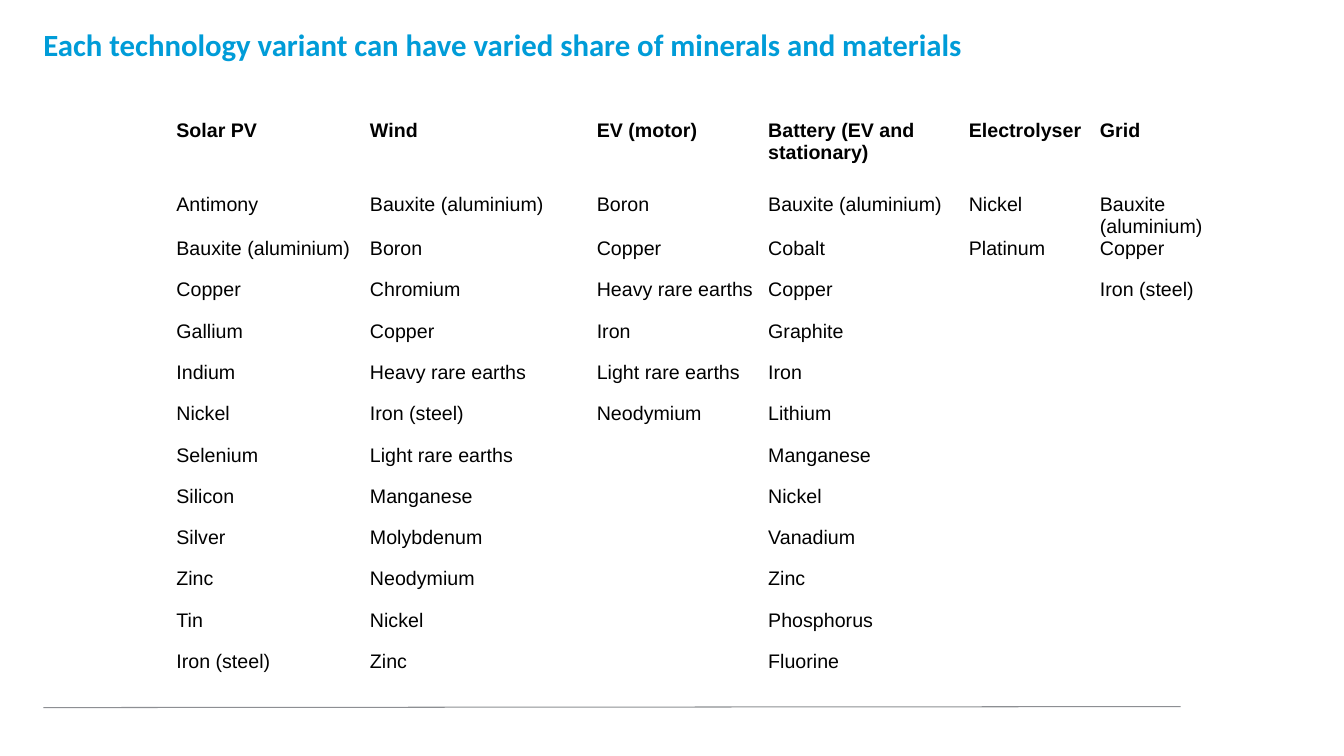
from itertools import zip_longest

from lxml import etree
from pptx import Presentation
from pptx.dml.color import RGBColor
from pptx.enum import shapes, text
from pptx.oxml import ns
from pptx.util import Inches, Pt

BLUE = RGBColor(0x00, 0x9C, 0xD8)
BLACK = RGBColor(0x00, 0x00, 0x00)
GREY = RGBColor(0x8D, 0x8F, 0x93)

HEAD = {"name": "Calibri", "size": Pt(22), "bold": True}
BODY = {"name": "Arial", "size": Pt(14), "bold": False}
INSET = {"margin_left": Inches(0.07), "margin_right": Inches(0.07),
         "margin_top": 0, "margin_bottom": 0,
         "vertical_anchor": text.MSO_ANCHOR.TOP}

WIDTHS = [1.09, 1.92, 2.25, 1.7, 1.99, 1.3, 1.86]
MINERALS = {
    "Solar PV": ["Antimony", "Bauxite (aluminium)", "Copper", "Gallium",
                 "Indium", "Nickel", "Selenium", "Silicon", "Silver", "Zinc",
                 "Tin", "Iron (steel)"],
    "Wind": ["Bauxite (aluminium)", "Boron", "Chromium", "Copper",
             "Heavy rare earths", "Iron (steel)", "Light rare earths",
             "Manganese", "Molybdenum", "Neodymium", "Nickel", "Zinc"],
    "EV (motor)": ["Boron", "Copper", "Heavy rare earths", "Iron",
                   "Light rare earths", "Neodymium"],
    "Battery (EV and stationary)": [
        "Bauxite (aluminium)", "Cobalt", "Copper", "Graphite", "Iron",
        "Lithium", "Manganese", "Nickel", "Vanadium", "Zinc", "Phosphorus",
        "Fluorine"],
    "Electrolyser": ["Nickel", "Platinum"],
    "Grid": ["Bauxite (aluminium)", "Copper", "Iron (steel)"],
}


def apply(target, values):
    for key, value in values.items():
        setattr(target, key, value)


def style(para, font, color):
    apply(para.font, font)
    para.font.color.rgb = color


def add_title(slide, words):
    title = slide.shapes.title
    apply(title, {"left": Inches(0.43), "top": Inches(0.21),
                  "width": Inches(12.34), "height": Inches(0.87)})
    frame = title.text_frame
    apply(frame, {"text": words, "word_wrap": True, "margin_left": 0,
                  "margin_right": 0, "margin_top": Inches(0.05),
                  "margin_bottom": Inches(0.05),
                  "vertical_anchor": text.MSO_ANCHOR.TOP})
    para = frame.paragraphs[0]
    para.alignment = text.PP_ALIGN.LEFT
    style(para, HEAD, BLUE)


def add_rule(slide):
    line = slide.shapes.add_connector(
        shapes.MSO_CONNECTOR.STRAIGHT, Inches(0.43), Inches(7.02),
        Inches(11.71), Inches(7.01))
    line.line.color.rgb = GREY
    line.line.width = Pt(0.75)
    etree.SubElement(line._element.spPr, ns.qn("a:effectLst"))


def fill_cell(cell, words, bold):
    apply(cell, INSET)
    cell.fill.background()
    cell.text = words
    style(cell.text_frame.paragraphs[0], {**BODY, "bold": bold}, BLACK)


def add_grid(slide):
    rows = [list(MINERALS), *zip_longest(*MINERALS.values(), fillvalue="")]
    table = slide.shapes.add_table(
        len(rows), len(WIDTHS), Inches(0.59), Inches(1.19),
        Inches(12.11), Inches(5.67)).table
    apply(table, {"first_row": False, "horz_banding": False})
    for col, width in zip(table.columns, WIDTHS):
        col.width = Inches(width)
    for r, names in enumerate(rows):
        table.rows[r].height = Inches(0.41 if r else 0.73)
        for c, name in enumerate(["", *names]):
            fill_cell(table.cell(r, c), name, r == 0)


def main():
    deck = Presentation()
    apply(deck, {"slide_width": Inches(13.33), "slide_height": Inches(7.5)})
    slide = deck.slides.add_slide(deck.slide_layouts[5])
    add_rule(slide)
    add_title(slide, "Each technology variant can have varied share of "
                     "minerals and materials")
    add_grid(slide)
    deck.save("out.pptx")


if __name__ == "__main__":
    main()
